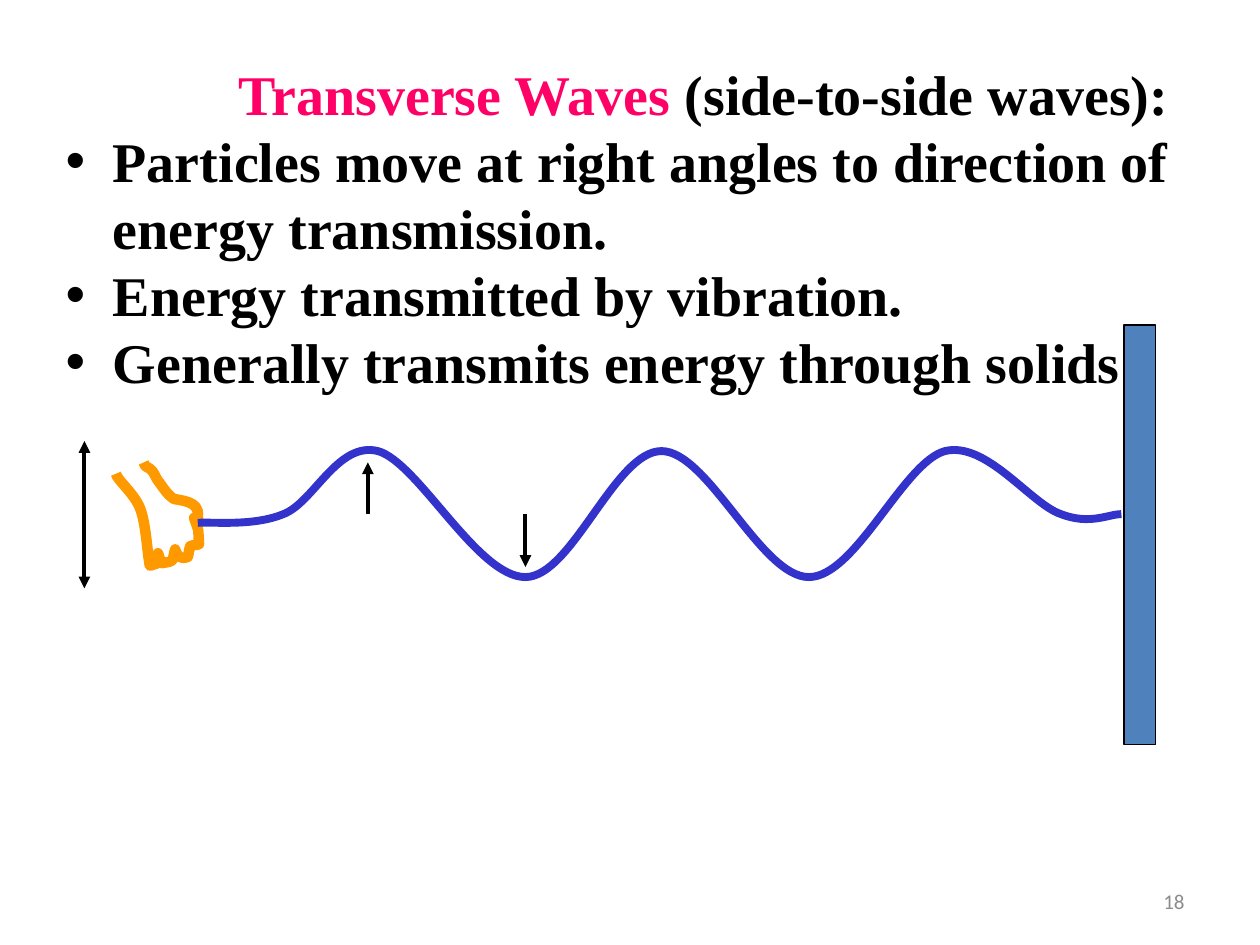
from dataclasses import dataclass

from lxml.etree import SubElement
from pptx import Presentation
from pptx.dml.color import RGBColor
from pptx.enum.shapes import MSO_CONNECTOR as CONNECTOR, MSO_SHAPE as SHAPE
from pptx.enum.text import MSO_ANCHOR as ANCHOR, MSO_AUTO_SIZE as AUTO_SIZE, PP_ALIGN as ALIGN
from pptx.oxml.ns import qn
from pptx.util import Inches, Pt


@dataclass(frozen=True)
class Theme:
    ink: str = "000000"
    accent: str = "FF0066"
    wall: str = "4F81BD"
    hand: str = "FF9900"
    wave: str = "3333CC"
    muted: str = "8C8C8C"
    font: str = "Times New Roman"
    number_font: str = "Calibri"
    text_size: float = 32
    leading: float = 38.4
    number_size: float = 12


THEME = Theme()

BULLETS = (
    "Particles move at right angles to direction of energy transmission.",
    "Energy transmitted by vibration.",
    "Generally transmits energy through solids",
)

# Each curve is a start point followed by triples: two control points and an end point.
HAND = (
    (0.92, 3.76),
    (0.93, 3.81), (1.06, 3.91), (1.11, 4.03),
    (1.16, 4.15), (1.17, 4.41), (1.19, 4.49),
    (1.21, 4.48), (1.23, 4.48), (1.25, 4.47),
    (1.25, 4.35), (1.25, 4.38), (1.28, 4.47),
    (1.39, 4.45), (1.36, 4.47), (1.39, 4.36),
    (1.41, 4.42), (1.43, 4.44), (1.49, 4.42),
    (1.52, 4.31), (1.48, 4.34), (1.58, 4.32),
    (1.57, 4.16), (1.58, 4.23), (1.54, 4.11),
    (1.61, 4.12), (1.56, 4.15), (1.56, 4.15),
    (1.61, 3.99), (1.49, 3.98), (1.38, 3.96),
    (1.32, 3.92), (1.29, 3.86), (1.25, 3.81),
    (1.23, 3.78), (1.22, 3.74), (1.19, 3.72),
    (1.14, 3.69), (1.16, 3.71), (1.14, 3.67),
)
WAVE = (
    (1.57, 4.15),
    (1.68, 4.14), (2.01, 4.18), (2.25, 4.08),
    (2.49, 3.99), (2.68, 3.5), (3, 3.58),
    (3.32, 3.67), (3.79, 4.58), (4.17, 4.58),
    (4.54, 4.58), (4.88, 3.58), (5.25, 3.58),
    (5.62, 3.58), (6.04, 4.58), (6.42, 4.58),
    (6.79, 4.58), (7.17, 3.67), (7.5, 3.58),
    (7.83, 3.5), (8.18, 4), (8.42, 4.08),
    (8.65, 4.17), (8.8, 4.08), (8.9, 4.08),
)


def rgb(color):
    return RGBColor.from_string(color)


def place(shape, x, y, w, h):
    shape.left, shape.top = Inches(x), Inches(y)
    shape.width, shape.height = Inches(w), Inches(h)


def add_run(p, text, color=THEME.ink, size=THEME.text_size, font=THEME.font, bold=True):
    r = p.add_run()
    r.text = text
    r.font.name, r.font.size, r.font.bold = font, Pt(size), bold
    r.font.color.rgb = rgb(color)


def prepare_text(tf):
    tf.word_wrap = True
    tf.auto_size = AUTO_SIZE.NONE
    tf.vertical_anchor = ANCHOR.TOP


def set_spacing(p):
    p.space_before = Pt(0)
    p.line_spacing = Pt(THEME.leading)


def add_title(s):
    title = s.shapes.title
    place(title, 1.79, 0.42, 7.71, 0.6)
    tf = title.text_frame
    prepare_text(tf)
    p = tf.paragraphs[0]
    p.alignment = ALIGN.LEFT
    set_spacing(p)
    add_run(p, "Transverse Waves", THEME.accent)
    add_run(p, " (side-to-side waves):")


def add_bullets(s):
    body = s.placeholders[1]
    place(body, 0.42, 0.95, 9.08, 2.24)
    tf = body.text_frame
    prepare_text(tf)
    for i, text in enumerate(BULLETS):
        p = tf.add_paragraph() if i else tf.paragraphs[0]
        set_spacing(p)
        add_run(p, text)


def add_slide_number(s):
    box = s.shapes.add_textbox(Inches(7.17), Inches(6.95), Inches(2.33), Inches(0.4))
    tf = box.text_frame
    tf.word_wrap = True
    tf.vertical_anchor = ANCHOR.MIDDLE
    p = tf.paragraphs[0]
    p.alignment = ALIGN.RIGHT
    add_run(p, "18", THEME.muted, THEME.number_size, THEME.number_font, bold=False)


def add_wall(s):
    wall = s.shapes.add_shape(SHAPE.RECTANGLE, Inches(8.92), Inches(2.58), Inches(0.25), Inches(3.33))
    wall.shadow.inherit = False
    wall.fill.solid()
    wall.fill.fore_color.rgb = rgb(THEME.wall)
    wall.line.color.rgb = rgb(THEME.ink)
    wall.line.width = Pt(0.75)


def add_curve(s, points, color, width):
    """Draw a polygon through all points, then turn each three segments into one Bézier."""
    start, *rest = [(Inches(x), Inches(y)) for x, y in points]
    builder = s.shapes.build_freeform(*start)
    builder.add_line_segments(rest, close=False)
    curve = builder.convert_to_shape()
    segments = list(curve._element.iter(qn("a:lnTo")))
    for i in range(0, len(segments), 3):
        bezier = SubElement(segments[i].getparent(), qn("a:cubicBezTo"))
        for segment in segments[i:i + 3]:
            bezier.append(segment[0])
            segment.getparent().remove(segment)
    curve.shadow.inherit = False
    curve.fill.background()
    curve.line.color.rgb = rgb(color)
    curve.line.width = Pt(width)


def add_arrow(s, x, y1, y2, both_ends=False):
    arrow = s.shapes.add_connector(CONNECTOR.STRAIGHT, Inches(x), Inches(y1), Inches(x), Inches(y2))
    arrow.line.color.rgb = rgb(THEME.ink)
    arrow.line.width = Pt(2.25)
    ln = arrow.line._get_or_add_ln()
    for end in ("a:headEnd", "a:tailEnd") if both_ends else ("a:tailEnd",):
        SubElement(ln, qn(end), type="triangle")
    SubElement(arrow._element.spPr, qn("a:effectLst"))


def main():
    prs = Presentation()
    prs.slide_width, prs.slide_height = Inches(10), Inches(7.5)
    s = prs.slides.add_slide(prs.slide_layouts[1])
    add_slide_number(s)
    add_title(s)
    add_bullets(s)
    add_wall(s)
    add_curve(s, HAND, THEME.hand, 6)
    add_curve(s, WAVE, THEME.wave, 4.5)
    add_arrow(s, 2.92, 4.08, 3.67)
    add_arrow(s, 4.17, 4.08, 4.5)
    add_arrow(s, 0.67, 3.5, 4.67, both_ends=True)
    prs.save("out.pptx")


if __name__ == "__main__":
    main()
